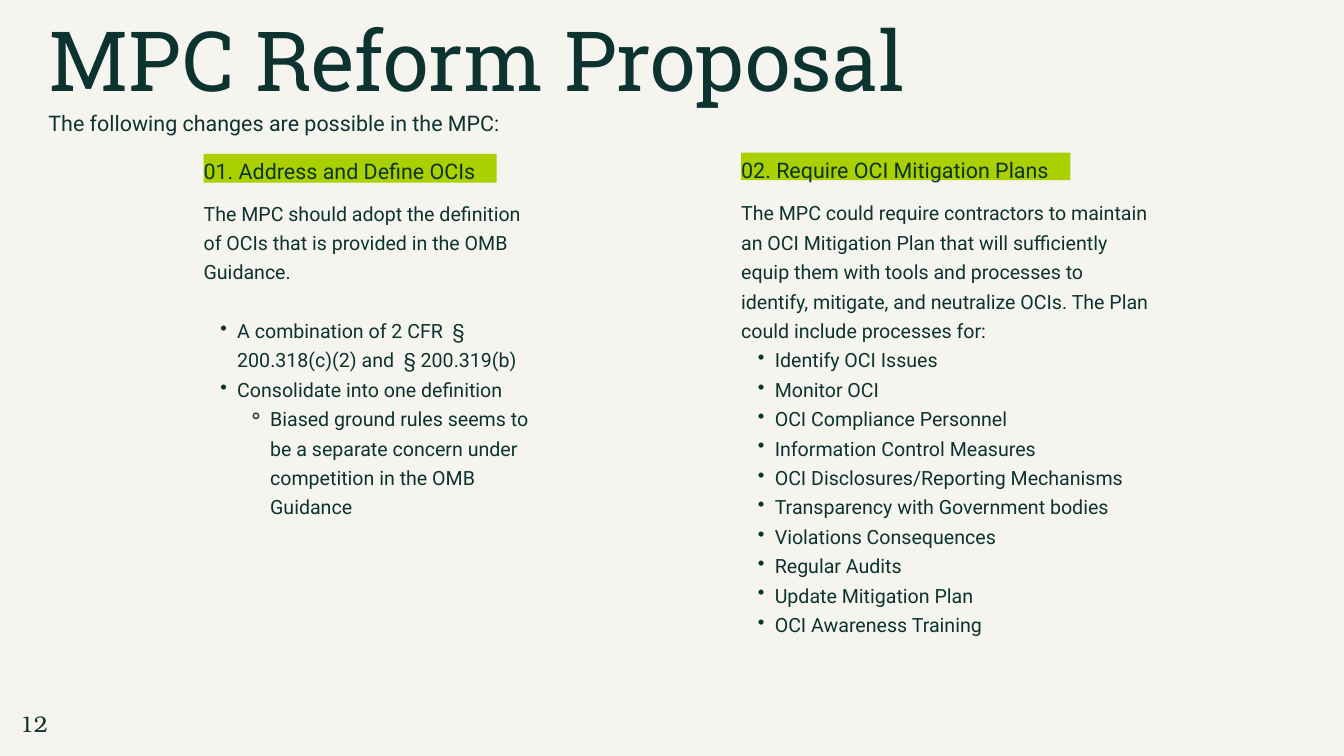
from lxml import etree
from pptx import Presentation
from pptx.dml.color import RGBColor
from pptx.enum import shapes, text
from pptx.oxml.ns import qn
from pptx.util import Inches, Pt

CREAM = RGBColor(0xF6, 0xF4, 0xEE)
GREEN = RGBColor(0x0D, 0x33, 0x30)
LIME = RGBColor(0xAA, 0xD0, 0x00)

# Bullet level: left margin, hanging indent, character
BULLETS = {1: (0.5, -0.25, "•"), 2: (0.99, -0.33, "⚬")}

prs = Presentation()
prs.slide_width, prs.slide_height = Inches(20), Inches(11.25)
s = prs.slides.add_slide(prs.slide_layouts[6])
s.background.fill.solid()
s.background.fill.fore_color.rgb = CREAM


def add_paragraph(tf, wording, size, spacing, font="Roboto", level=0):
    p = tf.paragraphs[0] if not tf.text else tf.add_paragraph()
    p.alignment = text.PP_ALIGN.LEFT
    p.line_spacing = Pt(spacing)
    r = p.add_run()
    r.text = wording
    r.font.size, r.font.name = Pt(size), font
    r.font.color.rgb = GREEN
    if level:
        margin, indent, char = BULLETS[level]
        p.level = level
        pPr = p._p.get_or_add_pPr()
        pPr.set("marL", str(Inches(margin)))
        pPr.set("indent", str(Inches(indent)))
        etree.SubElement(pPr, qn("a:buChar")).set("char", char)
    return p


def add_box(left, top, width, height, fill=None):
    at = [Inches(v) for v in (left, top, width, height)]
    if fill is None:
        sp = s.shapes.add_textbox(*at)
    else:
        sp = s.shapes.add_shape(shapes.MSO_SHAPE.RECTANGLE, *at)
        sp.shadow.inherit = False
        sp.fill.solid()
        sp.fill.fore_color.rgb = fill
        sp.line.fill.background()
    tf = sp.text_frame
    tf.word_wrap = True
    tf.vertical_anchor = text.MSO_ANCHOR.TOP
    tf.margin_left = tf.margin_top = tf.margin_right = tf.margin_bottom = 0
    return tf


# Title and lead-in
add_paragraph(add_box(0.72, 0.12, 13.35, 1.49), "MPC Reform Proposal", 89, 106.8, "Roboto Slab")
add_paragraph(add_box(0.72, 1.54, 17.75, 0.46),
              "The following changes are possible in the MPC:", 23, 34.5)

# Highlighted headings
for left, top, width, height, heading in [
    (3.03, 2.29, 4.36, 0.43, "01. Address and Define OCIs"),
    (11.03, 2.27, 4.9, 0.41, "02. Require OCI Mitigation Plans"),
]:
    add_paragraph(add_box(left, top, width, height, LIME), heading, 23, 32.2)

# Columns: left, width, height, gap before the list, intro, list items with level
columns = [
    (3.03, 4.88, 4.79, 31.5,
     "The MPC should adopt the definition of OCIs that is provided in the OMB Guidance.",
     [("A combination of 2 CFR  § 200.318(c)(2) and  § 200.319(b)", 1),
      ("Consolidate into one definition", 1),
      ("Biased ground rules seems to be a separate concern under competition "
       "in the OMB Guidance", 2)]),
    (11.03, 6.06, 7.93, 0,
     "The MPC could require contractors to maintain an OCI Mitigation Plan that will "
     "sufficiently equip them with tools and processes to identify, mitigate, and "
     "neutralize OCIs. The Plan could include processes for:",
     [(item, 1) for item in (
         "Identify OCI Issues", "Monitor OCI", "OCI Compliance Personnel",
         "Information Control Measures", "OCI Disclosures/Reporting Mechanisms",
         "Transparency with Government bodies", "Violations Consequences",
         "Regular Audits", "Update Mitigation Plan", "OCI Awareness Training")]),
]
for left, width, height, gap, intro, items in columns:
    tf = add_box(left, 2.91, width, height)
    p = add_paragraph(tf, intro, 21, 31.5)
    p.space_after = Pt(gap)
    for item, level in items:
        add_paragraph(tf, item, 21, 31.5, level=level)

# Page number
p = add_paragraph(add_box(0.29, 10.49, 0.43, 0.44), "12", 24.3, 34, "TeX Gyre Bonum")
p.alignment = text.PP_ALIGN.CENTER

prs.save("out.pptx")
